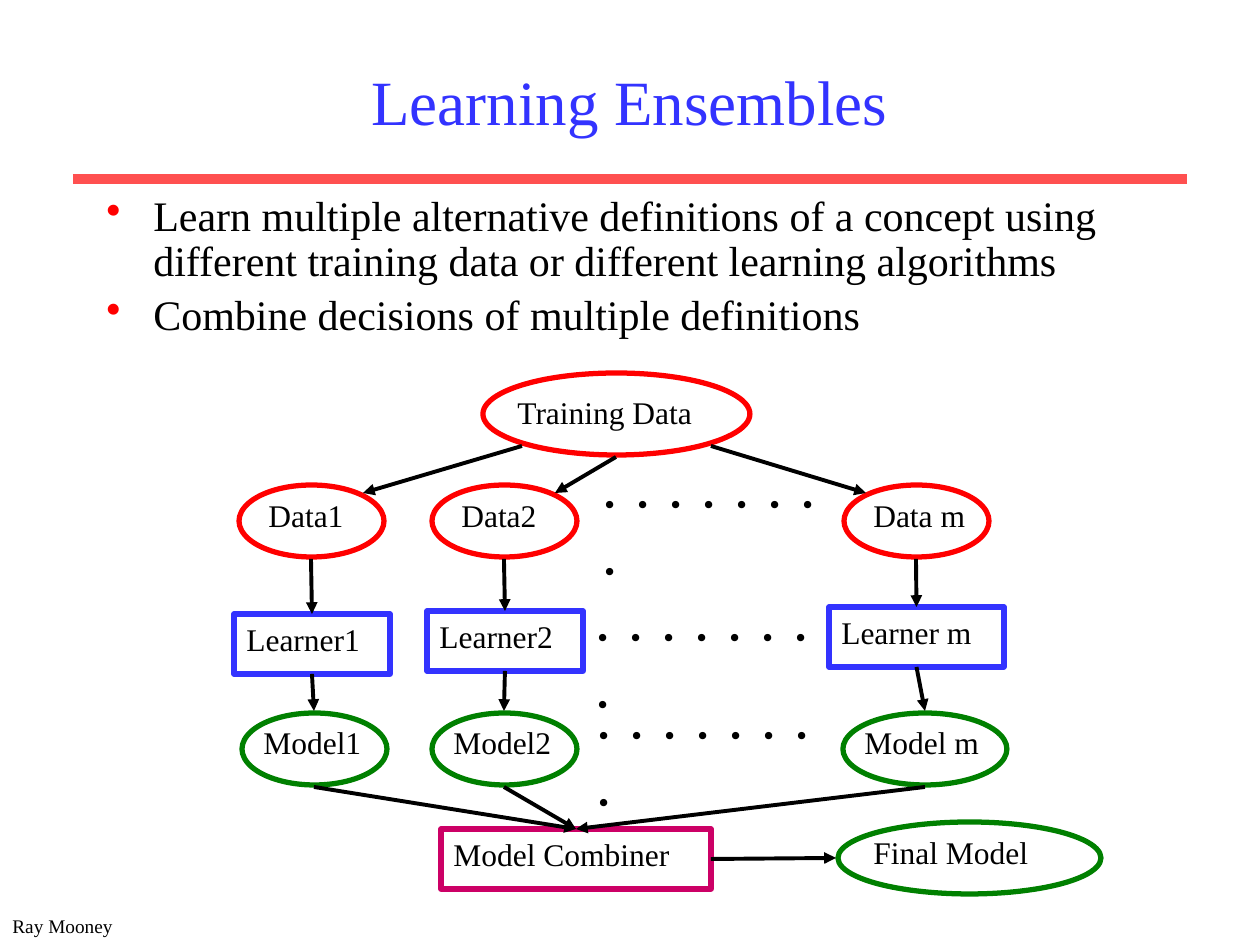
from dataclasses import dataclass
from typing import NamedTuple, Union

import pptx
import pptx.dml.color
import pptx.enum.shapes
import pptx.enum.text
import pptx.oxml
import pptx.oxml.ns
import pptx.util

EMU_PER_PX = 914400 // 126
FONT = "Times New Roman"
COLORS = {"title": "3333FF", "rule": "FF5050", "text": "000000", "data": "FF0000",
          "learner": "3333FF", "model": "008000", "combiner": "CC0066"}
SHAPE = pptx.enum.shapes.MSO_SHAPE
ALIGN = pptx.enum.text.PP_ALIGN
ANCHOR = pptx.enum.text.MSO_ANCHOR
TOP, BOTTOM, RIGHT = 0, 2, 3


@dataclass
class Node:
    text: str
    color: str
    x: int
    y: int
    w: int
    h: int
    dx: int = 0
    dy: int = 0

    def top(self) -> "Point":
        return Point(self.x + self.w // 2, self.y - 2)

    def bottom(self) -> "Point":
        return Point(self.x + self.w // 2, self.y + self.h + 2)


class Point(NamedTuple):
    x: int
    y: int


class Joint(NamedTuple):
    """The middle of one side of a drawn rectangle."""
    sp: object
    site: int


End = Union[Point, Joint]


def px(n: int) -> int:
    return n * EMU_PER_PX


def rgb(name: str):
    return pptx.dml.color.RGBColor.from_string(COLORS[name])


def apply(obj, values: dict) -> None:
    for name, value in values.items():
        setattr(obj, name, value)


def write(p, text: str, size: int, color: str = "text") -> None:
    r = p.add_run()
    r.text = text
    apply(r.font, {"name": FONT, "size": pptx.util.Pt(size)})
    r.font.color.rgb = rgb(color)


def text_box(s, x: int, y: int, w: int, h: int, wrap: bool = False):
    sp = s.shapes.add_textbox(px(x), px(y), px(w), px(h))
    sp.text_frame.word_wrap = wrap
    return sp.text_frame


def line(s, start: End, end: End, color: str, width: float):
    ends = [e if isinstance(e, Point) else Point(0, 0) for e in (start, end)]
    sp = s.shapes.add_connector(pptx.enum.shapes.MSO_CONNECTOR.STRAIGHT,
                                *(px(n) for e in ends for n in e))
    if isinstance(start, Joint):
        sp.begin_connect(*start)
    if isinstance(end, Joint):
        sp.end_connect(*end)
    sp.line.color.rgb = rgb(color)
    sp.line.width = pptx.util.Pt(width)
    sp._element.spPr.append(pptx.oxml.parse_xml(
        f'<a:effectLst {pptx.oxml.ns.nsdecls("a")}/>'))
    return sp


def arrow(s, start: End, end: End) -> None:
    sp = line(s, start, end, "text", 2.25)
    sp.line._get_or_add_ln().append(pptx.oxml.parse_xml(
        f'<a:tailEnd type="triangle" {pptx.oxml.ns.nsdecls("a")}/>'))


def outline(s, kind, node: Node):
    sp = s.shapes.add_shape(kind, px(node.x), px(node.y), px(node.w), px(node.h))
    sp.shadow.inherit = False
    sp.fill.background()
    sp.line.color.rgb = rgb(node.color)
    sp.line.width = pptx.util.Pt(3)
    return sp


def ellipse(s, node: Node) -> None:
    """Draw an ellipse with its label set off by dx, dy from its corner."""
    tf = text_box(s, node.x + node.dx, node.y + node.dy, node.w - node.dx, 54)
    write(tf.paragraphs[0], node.text, 18)
    outline(s, SHAPE.OVAL, node)


def rectangle(s, node: Node):
    sp = outline(s, SHAPE.RECTANGLE, node)
    apply(sp.text_frame, {"word_wrap": False, "vertical_anchor": ANCHOR.TOP})
    p = sp.text_frame.paragraphs[0]
    p.alignment = ALIGN.LEFT
    write(p, node.text, 18)
    return sp


def bullet(p, text: str, first: bool) -> None:
    pPr = p._p.get_or_add_pPr()
    pPr.set("marL", str(px(47)))
    pPr.set("indent", str(-px(47)))
    ns = pptx.oxml.ns.nsdecls("a")
    for xml in (f'<a:buClr {ns}><a:srgbClr val="{COLORS["data"]}"/></a:buClr>',
                f'<a:buChar {ns} char="•"/>'):
        pPr.append(pptx.oxml.parse_xml(xml))
    apply(p, {"line_spacing": 0.9, "space_before": pptx.util.Pt(0 if first else 4.8)})
    write(p, text, 24)


TRAINING = Node("Training Data", "data", 483, 373, 267, 82, 22, 14)
DATA = [Node(f"Data{n}", "data", x, 485, 145, 72, 17, 5)
        for n, x in (("1", 239), ("2", 432), (" m", 844))]
LEARNERS = [Node(f"Learner{n}", "learner", x, y, w, 60)
            for n, x, y, w in (("1", 234, 614, 156), ("2", 427, 611, 156),
                               (" m", 829, 607, 175))]
MODELS = [Node(f"Model{n}", "model", x, 713, w, 72, 9, 4)
          for n, x, w in (("1", 242, 145), ("2", 432, 145), (" m", 843, 164))]
COMBINER = Node("Model Combiner", "combiner", 441, 829, 270, 60)
FINAL = Node("Final Model", "model", 838, 822, 263, 72, 23, 5)
SPLITS = [(Point(522, 446), Point(363, 493)), (TRAINING.bottom(), Point(555, 493)),
          (Point(711, 446), Point(866, 493))]
DOTS = [Point(588, 462), Point(581, 595), Point(582, 693)]
BULLETS = ["Learn multiple alternative definitions of a concept using "
           "different training data or different learning algorithms",
           "Combine decisions of multiple definitions"]


def main() -> None:
    prs = pptx.Presentation()
    apply(prs, {"slide_width": px(1260), "slide_height": px(945)})
    s = prs.slides.add_slide(prs.slide_layouts[6])

    line(s, Point(73, 179), Point(1187, 179), "rule", 6)
    title = text_box(s, 94, 32, 1071, 136, wrap=True)
    title.vertical_anchor = ANCHOR.MIDDLE
    title.paragraphs[0].alignment = ALIGN.CENTER
    write(title.paragraphs[0], "Learning Ensembles", 36, "title")

    body = text_box(s, 94, 189, 1071, 165, wrap=True)
    for i, text in enumerate(BULLETS):
        bullet(body.add_paragraph() if i else body.paragraphs[0], text, i == 0)

    for node in (TRAINING, *DATA, *MODELS, FINAL):
        ellipse(s, node)
    for start, end in SPLITS:
        arrow(s, start, end)
    combiner = rectangle(s, COMBINER)
    for data, learner, model in zip(DATA, LEARNERS, MODELS):
        sp = rectangle(s, learner)
        arrow(s, data.bottom(), Joint(sp, TOP))
        arrow(s, Joint(sp, BOTTOM), model.top())
        arrow(s, model.bottom(), Joint(combiner, TOP))
    arrow(s, Joint(combiner, RIGHT), Point(836, 858))

    for x, y in DOTS:
        tf = text_box(s, x, y, 250, 79, wrap=True)
        write(tf.paragraphs[0], " ".join("⋅" * 8), 32)
    write(text_box(s, 0, 908, 131, 37).paragraphs[0], "Ray Mooney", 11)
    prs.save("out.pptx")


if __name__ == "__main__":
    main()
